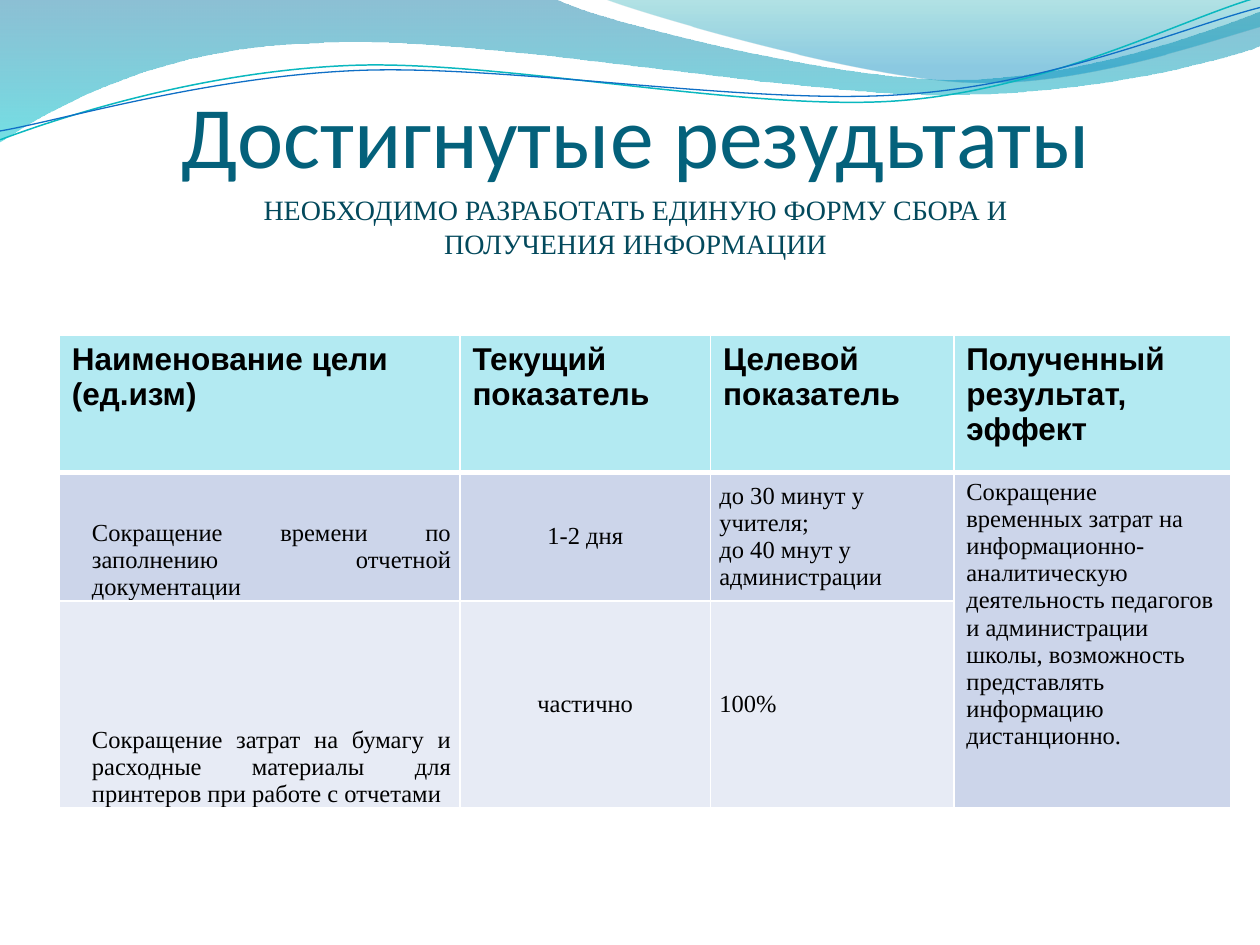
from math import cos, radians, sin

from lxml import etree
from pptx import Presentation
from pptx.dml.color import RGBColor
from pptx.enum.text import MSO_ANCHOR, PP_ALIGN
from pptx.oxml import parse_xml
from pptx.oxml.ns import nsdecls, qn
from pptx.util import Inches, Pt

# Content
TITLE = "Достигнутые резудьтаты"
SUBTITLE = "НЕОБХОДИМО РАЗРАБОТАТЬ ЕДИНУЮ ФОРМУ СБОРА И ПОЛУЧЕНИЯ ИНФОРМАЦИИ"
HEADER = ["Наименование цели (ед.изм)", "Текущий показатель",
          "Целевой показатель", "Полученный результат, эффект"]
GOALS = [
    [["Сокращение времени по заполнению отчетной документации"], ["1-2 дня"],
     ["до 30 минут у учителя;", "до 40 мнут у администрации"]],
    [["Сокращение затрат на бумагу и расходные материалы для принтеров "
      "при работе с отчетами"], ["частично"], ["100%"]],
]
EFFECT = ("Сокращение временных затрат на информационно-аналитическую "
          "деятельность педагогов и администрации школы, возможность "
          "представлять информацию дистанционно.")
COLUMNS = [3.18, 1.99, 1.93, 2.2]
ROWS = [1.09, 1.02, 1.64]

THEME = {
    "title": ("Calibri", 50, "04617B"),
    "subtitle": ("Times New Roman", 16, "03495C"),
    "header": ("Arial", 18, "000000"),
    "body": ("Times New Roman", 14, "000000"),
    "header_fill": "B3EAF2",
    "row_fills": ["CCD5EA", "E7EBF5"],
    "border": "FFFFFF",
}

# Waves: a step is one point (straight) or three points (Bezier curve)
# Gradient stops: position %, colour, opacity %
WAVES = [
    {"start": (0, 0),
     "steps": [[(4.4, -0.01)],
               [(4.76, 0.17), (6.64, 0.63), (7.58, 0.63)],
               [(8.53, 0.63), (9.58, 0.26), (10, 0.09)],
               [(10.01, 0.36)],
               [(9.83, 0.44), (8.7, 0.76), (7.46, 0.75)],
               [(6.22, 0.75), (3.82, 0.28), (2.57, 0.34)],
               [(1.29, 0.36), (0.46, 0.83), (-0.01, 1.13)],
               [(0, 0)]],
     "gradient": [(0, "0074A1", 45), (100, "00C6CF", 55)]},
    {"start": (4.79, -0.01),
     "steps": [[(5.09, 0.11), (6.82, 0.62), (7.69, 0.65)],
               [(8.56, 0.69), (9.61, 0.32), (10, 0.21)],
               [(10, 0)], [(4.79, -0.01)]],
     "gradient": [(0, "00A1A9", 30), (80, "008BBF", 45)]},
    {"start": (0, 1.11),
     "steps": [[(0.48, 0.93), (1.58, 0.57), (2.77, 0.52)],
               [(3.95, 0.47), (5.93, 0.89), (7.13, 0.8)],
               [(8.33, 0.71), (9.38, 0.15), (9.98, -0.02)]],
     "line": ("0AB8BF", 0.85), "tilt": 2.7, "center": (4.99, 0.58)},
    {"start": (0, 1.04),
     "steps": [[(0.47, 0.96), (1.64, 0.61), (2.83, 0.56)],
               [(4.03, 0.51), (5.97, 0.84), (7.17, 0.75)],
               [(8.36, 0.67), (9.41, 0.21), (10, 0.06)]],
     "line": ("0F6FC6", 0.75), "tilt": 2.7, "center": (5, 0.59)},
]


def turn(point, center, degrees):
    angle = radians(degrees)
    x, y = point[0] - center[0], point[1] - center[1]
    return (Inches(center[0] + x * cos(angle) - y * sin(angle)),
            Inches(center[1] + x * sin(angle) + y * cos(angle)))


def fill_gradient(shape, stops):
    shape.fill.background()
    gradient = parse_xml(f'<a:gradFill {nsdecls("a")}><a:gsLst/>'
                         '<a:lin ang="5400000" scaled="0"/></a:gradFill>')
    for position, color, opacity in stops:
        stop = etree.SubElement(gradient[0], qn("a:gs"), pos=str(position * 1000))
        tint = etree.SubElement(stop, qn("a:srgbClr"), val=color)
        etree.SubElement(tint, qn("a:alpha"), val=str(opacity * 1000))
    properties = shape.element.spPr
    properties.replace(properties.find(qn("a:noFill")), gradient)


def add_wave(page, wave):
    tilt, center = wave.get("tilt", 0), wave.get("center", (0, 0))
    start = turn(wave["start"], center, tilt)
    steps = [[turn(point, center, tilt) for point in step] for step in wave["steps"]]
    builder = page.shapes.build_freeform(*start, scale=1)
    builder.add_line_segments([step[-1] for step in steps], close="gradient" in wave)
    shape = builder.convert_to_shape()
    shape.shadow.inherit = False

    # Turn the segments with control points into curves
    segments = list(shape.element.iter(qn("a:lnTo")))
    for segment, step in zip(segments, steps):
        if len(step) == 3:
            curve = etree.Element(qn("a:cubicBezTo"))
            for x, y in step:
                etree.SubElement(curve, qn("a:pt"), x=str(x - shape.left),
                                 y=str(y - shape.top))
            segment.getparent().replace(segment, curve)
    shape.rotation = -tilt

    if "gradient" in wave:
        fill_gradient(shape, wave["gradient"])
        shape.line.fill.background()
    else:
        color, width = wave["line"]
        shape.fill.background()
        shape.line.color.rgb = RGBColor.from_string(color)
        shape.line.width = Pt(width)


def write(frame, texts, style, align, bold=False):
    font_name, size, color = THEME[style]
    frame.word_wrap = True
    for index, text in enumerate(texts):
        para = frame.add_paragraph() if index else frame.paragraphs[0]
        para.alignment = align
        span = para.add_run()
        span.text = text
        span.font.name = font_name
        span.font.size = Pt(size)
        span.font.bold = bold
        span.font.color.rgb = RGBColor.from_string(color)


def add_text(page, place, text, style, anchor, insets):
    box = page.shapes.add_textbox(*map(Inches, place))
    frame = box.text_frame
    frame.vertical_anchor = anchor
    (frame.margin_left, frame.margin_top,
     frame.margin_right, frame.margin_bottom) = map(Inches, insets)
    write(frame, [text], style, PP_ALIGN.CENTER)


def style_cell(cell, fill, top, bottom):
    cell.fill.solid()
    cell.fill.fore_color.rgb = RGBColor.from_string(fill)
    properties = cell._tc.get_or_add_tcPr()
    widths = {"lnL": 1, "lnR": 1, "lnT": top, "lnB": bottom}
    for index, (side, width) in enumerate(widths.items()):
        properties.insert(index, parse_xml(
            f'<a:{side} {nsdecls("a")} w="{Pt(width)}"><a:solidFill>'
            f'<a:srgbClr val="{THEME["border"]}"/></a:solidFill></a:{side}>'))


def add_goal_table(page):
    frame = page.shapes.add_table(len(ROWS), len(COLUMNS), Inches(0.47), Inches(2.66),
                                  Inches(sum(COLUMNS)), Inches(sum(ROWS)))
    table = frame.table
    for column, width in zip(table.columns, COLUMNS):
        column.width = Inches(width)
    for row, height in zip(table.rows, ROWS):
        row.height = Inches(height)
    fills = [THEME["header_fill"], *THEME["row_fills"]]
    for row, fill in enumerate(fills):
        for column in range(len(COLUMNS)):
            style_cell(table.cell(row, column), fill,
                       3 if row == 1 else 1, 3 if row == 0 else 1)

    # Header row
    for column, text in enumerate(HEADER):
        write(table.cell(0, column).text_frame, [text], "header", PP_ALIGN.LEFT, True)

    # Goal rows
    layout = [(PP_ALIGN.JUSTIFY, MSO_ANCHOR.BOTTOM),
              (PP_ALIGN.CENTER, MSO_ANCHOR.MIDDLE),
              (PP_ALIGN.LEFT, MSO_ANCHOR.MIDDLE)]
    for row, goal in enumerate(GOALS, start=1):
        for column, (texts, (align, anchor)) in enumerate(zip(goal, layout)):
            cell = table.cell(row, column)
            cell.vertical_anchor = anchor
            cell.margin_left = cell.margin_right = Inches(0.07)
            cell.margin_top = cell.margin_bottom = 0
            write(cell.text_frame, texts, "body", align)
        name = table.cell(row, 0).text_frame.paragraphs[0]
        name._p.get_or_add_pPr().set("marL", str(Inches(0.19)))

    # Shared effect cell
    effect = table.cell(1, 3)
    effect.merge(table.cell(2, 3))
    write(effect.text_frame, [EFFECT], "body", PP_ALIGN.LEFT)


def main():
    deck = Presentation()
    deck.slide_width, deck.slide_height = Inches(10), Inches(7.5)
    page = deck.slides.add_slide(deck.slide_layouts[6])
    for wave in WAVES:
        add_wave(page, wave)
    add_text(page, (1.41, 1.48, 7.27, 0.64), SUBTITLE, "subtitle",
             MSO_ANCHOR.TOP, (0.1, 0.05, 0.1, 0.05))
    add_goal_table(page)
    add_text(page, (0.55, 0.23, 9, 1.25), TITLE, "title",
             MSO_ANCHOR.BOTTOM, (0, 0.05, 0, 0))
    deck.save("out.pptx")


if __name__ == "__main__":
    main()
